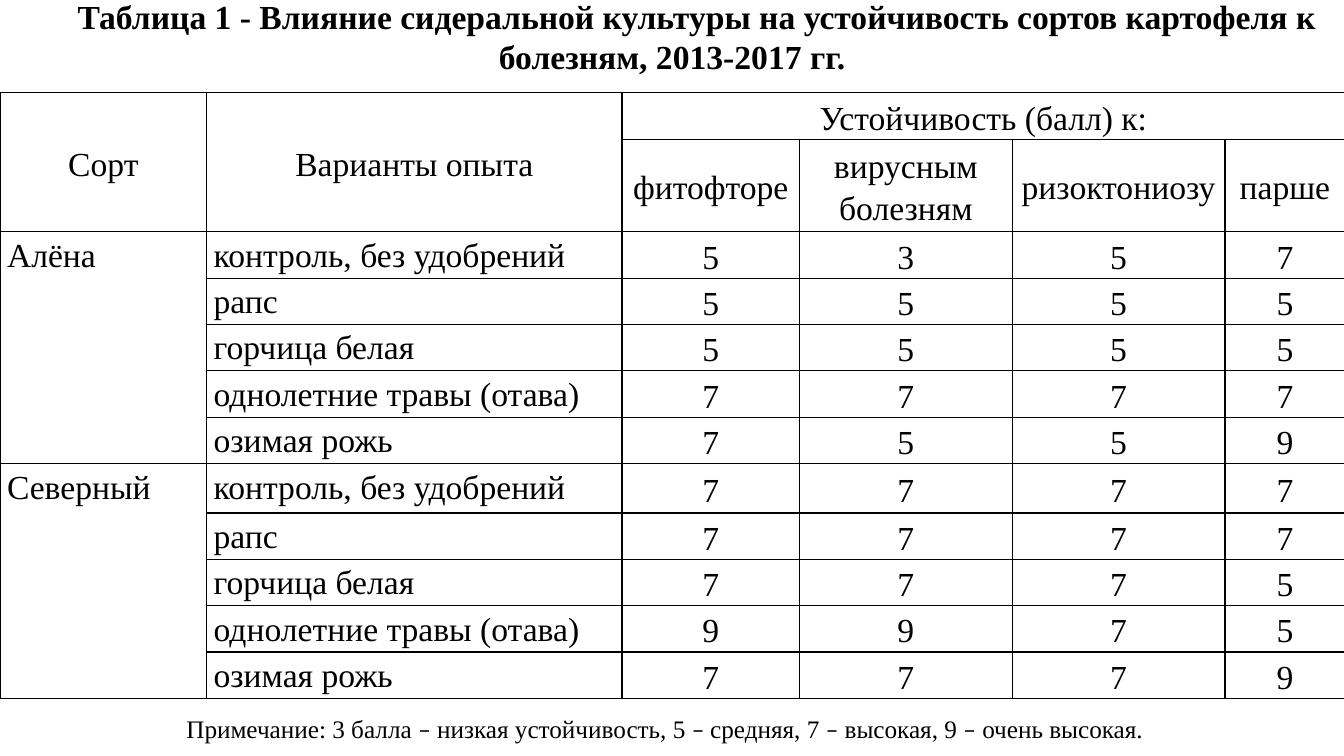
from dataclasses import dataclass

from lxml import etree
from pptx import Presentation
from pptx import util as u
from pptx.dml.color import RGBColor
from pptx.enum import text
from pptx.oxml.ns import qn


@dataclass(frozen=True)
class Theme:
    ink: RGBColor = RGBColor(0, 0, 0)
    paper: RGBColor = RGBColor(255, 255, 255)
    font: str = "Times New Roman"
    dash_font: str = "Calibri"
    main_size: u.Pt = u.Pt(24)
    note_size: u.Pt = u.Pt(18)
    border: u.Pt = u.Pt(1)


theme = Theme()


def style(span, size, font=theme.font, bold=False):
    span.font.size = size
    span.font.name = font
    span.font.bold = bold
    span.font.color.rgb = theme.ink


def add_borders(cell):
    properties = cell._tc.get_or_add_tcPr()
    for side in ("a:lnL", "a:lnR", "a:lnT", "a:lnB"):
        line = etree.SubElement(properties, qn(side), w=str(theme.border))
        fill = etree.SubElement(line, qn("a:solidFill"))
        etree.SubElement(fill, qn("a:srgbClr"), val=str(theme.ink))


deck = Presentation()
deck.slide_width = u.Inches(13.33)
deck.slide_height = u.Inches(7.5)
page = deck.slides.add_slide(deck.slide_layouts[5])
first_line_indent = str(u.Inches(0.49))

title = page.shapes.title
title.left, title.top = u.Inches(0), u.Inches(-0.1)
title.width, title.height = u.Inches(13.33), u.Inches(0.91)
title.text_frame.text = (
    "Таблица 1 - Влияние сидеральной культуры на устойчивость сортов картофеля "
    "к болезням, 2013-2017 гг."
)
title.text_frame.auto_size = text.MSO_AUTO_SIZE.NONE
title.text_frame.vertical_anchor = text.MSO_ANCHOR.MIDDLE
para = title.text_frame.paragraphs[0]
para.alignment = text.PP_ALIGN.CENTER
para._p.get_or_add_pPr().set("indent", first_line_indent)
style(para.runs[0], theme.main_size, bold=True)

variants = [
    "контроль, без удобрений",
    "рапс",
    "горчица белая",
    "однолетние травы (отава)",
    "озимая рожь",
]
scores = {
    "Алёна": ["5357", "5555", "5555", "7777", "7559"],
    "Северный": ["7777", "7777", "7775", "9975", "7779"],
}
rows = [
    ["Сорт", "Варианты опыта", "Устойчивость (балл) к:", "", "", ""],
    ["", "", "фитофторе", "вирусным болезням", "ризоктониозу", "парше"],
]
for sort, sort_scores in scores.items():
    for index, (variant, marks) in enumerate(zip(variants, sort_scores)):
        rows.append([sort if index == 0 else "", variant, *marks])

column_widths = [2.05, 4.12, 1.76, 2.11, 2.11, 1.19]
row_heights = [0.46, 0.92] + [0.46] * 5 + [0.49] + [0.46] * 4
table = page.shapes.add_table(
    len(rows), len(column_widths),
    u.Inches(0), u.Inches(0.92), u.Inches(13.33), u.Inches(6.01),
).table
table.first_row = False
table.horz_banding = False
for column, width in zip(table.columns, column_widths):
    column.width = u.Inches(width)
for row, height in zip(table.rows, row_heights):
    row.height = u.Inches(height)

for top, left, bottom, right in [
    (0, 0, 1, 0), (0, 1, 1, 1), (0, 2, 0, 5), (2, 0, 6, 0), (7, 0, 11, 0),
]:
    table.cell(top, left).merge(table.cell(bottom, right))

for row_index, row in enumerate(rows):
    for column_index, wording in enumerate(row):
        cell = table.cell(row_index, column_index)
        add_borders(cell)
        cell.fill.solid()
        cell.fill.fore_color.rgb = theme.paper
        cell.margin_left = cell.margin_right = u.Inches(0.07)
        cell.margin_top = cell.margin_bottom = 0
        centred = row_index < 2 or column_index > 1
        cell.vertical_anchor = text.MSO_ANCHOR.MIDDLE if centred else text.MSO_ANCHOR.TOP
        if cell.is_spanned:
            continue
        cell.text_frame.text = wording
        para = cell.text_frame.paragraphs[0]
        para.alignment = text.PP_ALIGN.CENTER if centred else text.PP_ALIGN.LEFT
        para.line_spacing = 1.15
        style(para.runs[0], theme.main_size)

note = page.shapes.add_textbox(u.Inches(1.26), u.Inches(7.03), u.Inches(11.17), u.Inches(0.4))
note.text_frame.word_wrap = True
para = note.text_frame.paragraphs[0]
para._p.get_or_add_pPr().set("indent", first_line_indent)
for wording in [
    "Примечание: 3 балла ", "–", " низкая устойчивость, 5 ", "– ",
    "средняя, 7 ", "–", " высокая, 9 ", "–", " очень высокая.",
]:
    span = para.add_run()
    span.text = wording
    style(span, theme.note_size, theme.dash_font if "–" in wording else theme.font)

deck.save("out.pptx")
